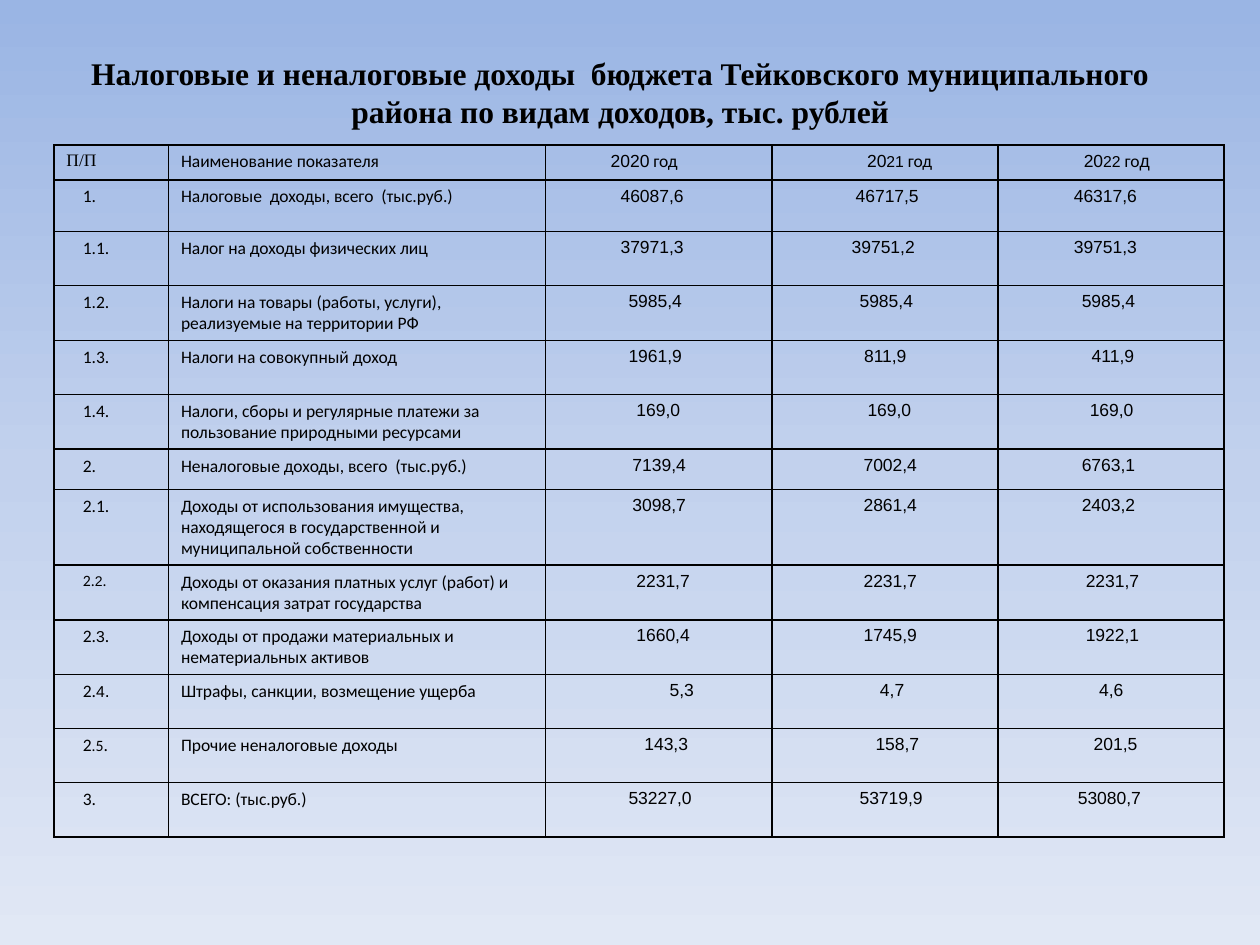
"""Build a one-slide deck with a table of district budget revenues for 2020–2022."""
import copy
from dataclasses import dataclass
from typing import NamedTuple, Optional

import pptx
import pptx.dml.color
import pptx.enum.text
import pptx.oxml
import pptx.oxml.ns
import pptx.slide
import pptx.table
import pptx.text.text
import pptx.util
from pptx.util import Cm, Pt


@dataclass(frozen=True)
class Theme:
    ink: str = "000000"
    gradient: tuple[str, ...] = ("9AB5E4", "C2D1ED", "E1E8F5")
    title_font: str = "Times New Roman"
    label_font: str = "Calibri"
    number_font: str = "Arial"
    title_size: float = 18
    text_size: float = 10
    small_size: float = 9
    tiny_size: float = 8
    space_before: float = 2
    border: float = 1


THEME = Theme()


class Span(NamedTuple):
    text: str
    font: Optional[str] = None
    size: Optional[float] = None


class Entry(NamedTuple):
    spans: tuple[Span, ...]
    font: str = THEME.label_font
    indent: float = 0.25
    space_before: float = THEME.space_before


class Revenue(NamedTuple):
    number: tuple[Span, ...]
    name: str
    values: tuple[str, str, str]
    indents: tuple[float, float, float]
    height: float = 1.09


def plain(text: str) -> tuple[Span, ...]:
    return (Span(text),)


LABEL, DIGIT = THEME.label_font, THEME.number_font
SMALL, TINY = THEME.small_size, THEME.tiny_size
YEAR = Span(" год", LABEL)

TITLE = ("Налоговые и неналоговые доходы  бюджета Тейковского "
         "муниципального района по видам доходов, тыс. рублей")
COLUMN_WIDTHS = (2.31, 7.6, 4.56, 4.56, 4.56)
HEADER_HEIGHT = 0.71
NUMBER_INDENT = 0.58

HEADER = (
    Entry(plain("П/П"), THEME.title_font, space_before=0),
    Entry(plain("Наименование показателя")),
    Entry((Span("2020"), YEAR), DIGIT, 1.31),
    Entry((Span("20"), Span("21", size=SMALL), YEAR), DIGIT, 1.92),
    Entry((Span("20"), Span("22", size=SMALL), Span(" го", LABEL), Span("д")), DIGIT, 1.73),
)

REVENUES = (
    Revenue(plain("1."), "Налоговые  доходы, всего  (тыс.руб.)",
            ("46087,6", "46717,5", "46317,6"), (1.51, 1.69, 1.53), 1.04),
    Revenue(plain("1.1."), "Налог на доходы физических лиц",
            ("37971,3", "39751,2", "39751,3"), (1.51, 1.61, 1.53)),
    Revenue(plain("1.2."), "Налоги на товары (работы, услуги), реализуемые на территории РФ",
            ("5985,4", "5985,4", "5985,4"), (1.67, 1.77, 1.69)),
    Revenue(plain("1.3."), "Налоги на совокупный доход",
            ("1961,9", "811,9", "411,9"), (1.67, 1.86, 1.89)),
    Revenue(plain("1.4."), "Налоги, сборы и регулярные платежи за пользование природными ресурсами",
            ("169,0", "169,0", "169,0"), (1.83, 1.93, 1.85)),
    Revenue(plain("2."), "Неналоговые доходы, всего  (тыс.руб.)",
            ("7139,4", "7002,4", "6763,1"), (1.75, 1.85, 1.69), 0.81),
    Revenue(plain("2.1."), "Доходы от использования имущества, находящегося в государственной "
            "и муниципальной собственности",
            ("3098,7", "2861,4", "2403,2"), (1.75, 1.85, 1.69)),
    Revenue((Span("2.", size=SMALL), Span("2", DIGIT, TINY), Span(".", size=SMALL)),
            "Доходы от оказания платных услуг (работ) и компенсация затрат государства",
            ("2231,7", "2231,7", "2231,7"), (1.83, 1.85, 1.77)),
    Revenue((Span("2."), Span("3", DIGIT, SMALL), Span(".")),
            "Доходы от продажи материальных и нематериальных активов",
            ("1660,4", "1745,9", "1922,1"), (1.83, 1.85, 1.77)),
    Revenue((Span("2."), Span("4", DIGIT, SMALL), Span(".", DIGIT)),
            "Штрафы, санкции, возмещение ущерба",
            ("5,3", "4,7", "4,6"), (2.5, 2.18, 2.04)),
    Revenue((Span("2"), Span(".5", size=SMALL), Span(".")), "Прочие неналоговые доходы",
            ("143,3", "158,7", "201,5"), (1.99, 2.09, 1.93)),
    Revenue(plain("3."), "ВСЕГО: (тыс.руб.)",
            ("53227,0", "53719,9", "53080,7"), (1.67, 1.77, 1.61)),
)


def color(code: str) -> pptx.dml.color.RGBColor:
    return pptx.dml.color.RGBColor.from_string(code)


def style_paragraph(para: pptx.text.text._Paragraph, font: str, size: float) -> None:
    para.font.name = font
    para.font.size = Pt(size)
    para.font.color.rgb = color(THEME.ink)


def paint_background(page: pptx.slide.Slide) -> None:
    fill = page.background.fill
    fill.gradient()
    fill.gradient_angle = 270
    stop_list = next(page.element.iter(pptx.oxml.ns.qn("a:gsLst")))
    stop_list.append(copy.deepcopy(stop_list[-1]))
    for index, (stop, code) in enumerate(zip(fill.gradient_stops, THEME.gradient)):
        stop.position = index / (len(THEME.gradient) - 1)
        stop.color.rgb = color(code)


def add_title(page: pptx.slide.Slide) -> None:
    box = page.shapes.add_textbox(Cm(1.09), Cm(0.05), Cm(22.83), Cm(3.61))
    frame = box.text_frame
    frame.word_wrap = True
    frame.vertical_anchor = pptx.enum.text.MSO_ANCHOR.MIDDLE
    para = frame.paragraphs[0]
    para.text = TITLE
    para.alignment = pptx.enum.text.PP_ALIGN.CENTER
    style_paragraph(para, THEME.title_font, THEME.title_size)
    para.font.bold = True


def outline_cell(cell: pptx.table._Cell) -> None:
    properties = cell._tc.get_or_add_tcPr()
    namespace = pptx.oxml.ns.nsdecls("a")
    for side in ("lnL", "lnR", "lnT", "lnB"):
        properties.append(pptx.oxml.parse_xml(
            f'<a:{side} {namespace} w="{Pt(THEME.border)}"><a:solidFill>'
            f'<a:srgbClr val="{THEME.ink}"/></a:solidFill></a:{side}>'))


def fill_cell(cell: pptx.table._Cell, entry: Entry) -> None:
    outline_cell(cell)
    cell.fill.background()
    cell.margin_left = Cm(entry.indent)
    para = cell.text_frame.paragraphs[0]
    para.space_before = Pt(entry.space_before)
    style_paragraph(para, entry.font, THEME.text_size)
    for span in entry.spans:
        run = para.add_run()
        run.text = span.text
        if span.font:
            run.font.name = span.font
        if span.size:
            run.font.size = Pt(span.size)


def revenue_entries(revenue: Revenue) -> tuple[Entry, ...]:
    values = (Entry(plain(value), DIGIT, indent)
              for value, indent in zip(revenue.values, revenue.indents))
    return (Entry(revenue.number, indent=NUMBER_INDENT), Entry(plain(revenue.name)), *values)


def add_revenue_table(page: pptx.slide.Slide) -> None:
    rows = (HEADER, *map(revenue_entries, REVENUES))
    heights = (HEADER_HEIGHT, *(revenue.height for revenue in REVENUES))
    table = page.shapes.add_table(len(rows), len(COLUMN_WIDTHS), Cm(1.09), Cm(2.92),
                                  Cm(sum(COLUMN_WIDTHS)), Cm(sum(heights))).table
    table.first_row = table.horz_banding = False
    for column, width in zip(table.columns, COLUMN_WIDTHS):
        column.width = Cm(width)
    for row, height, entries in zip(table.rows, heights, rows):
        row.height = Cm(height)
        for cell, entry in zip(row.cells, entries):
            fill_cell(cell, entry)


def main() -> None:
    deck = pptx.Presentation()
    deck.slide_width, deck.slide_height = Cm(25.4), Cm(19.05)
    page = deck.slides.add_slide(deck.slide_layouts[6])
    paint_background(page)
    add_title(page)
    add_revenue_table(page)
    deck.save("out.pptx")


if __name__ == "__main__":
    main()
